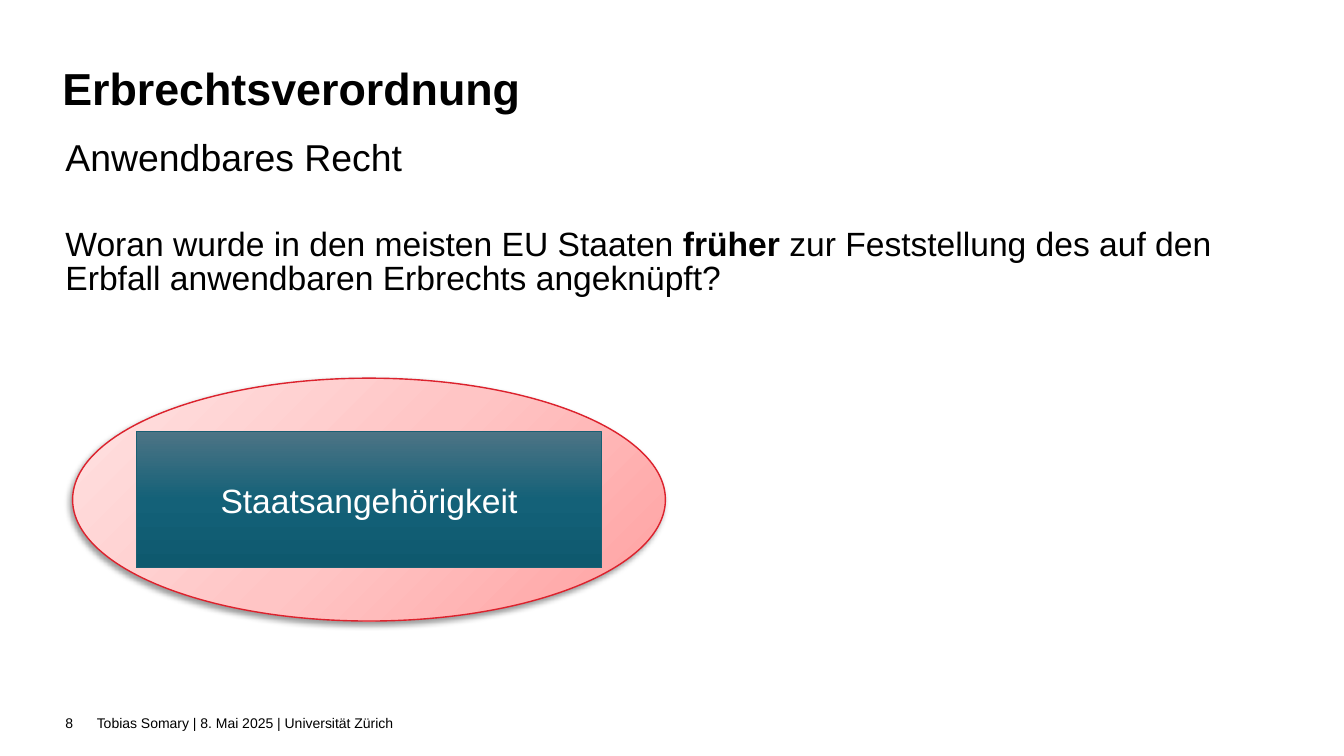
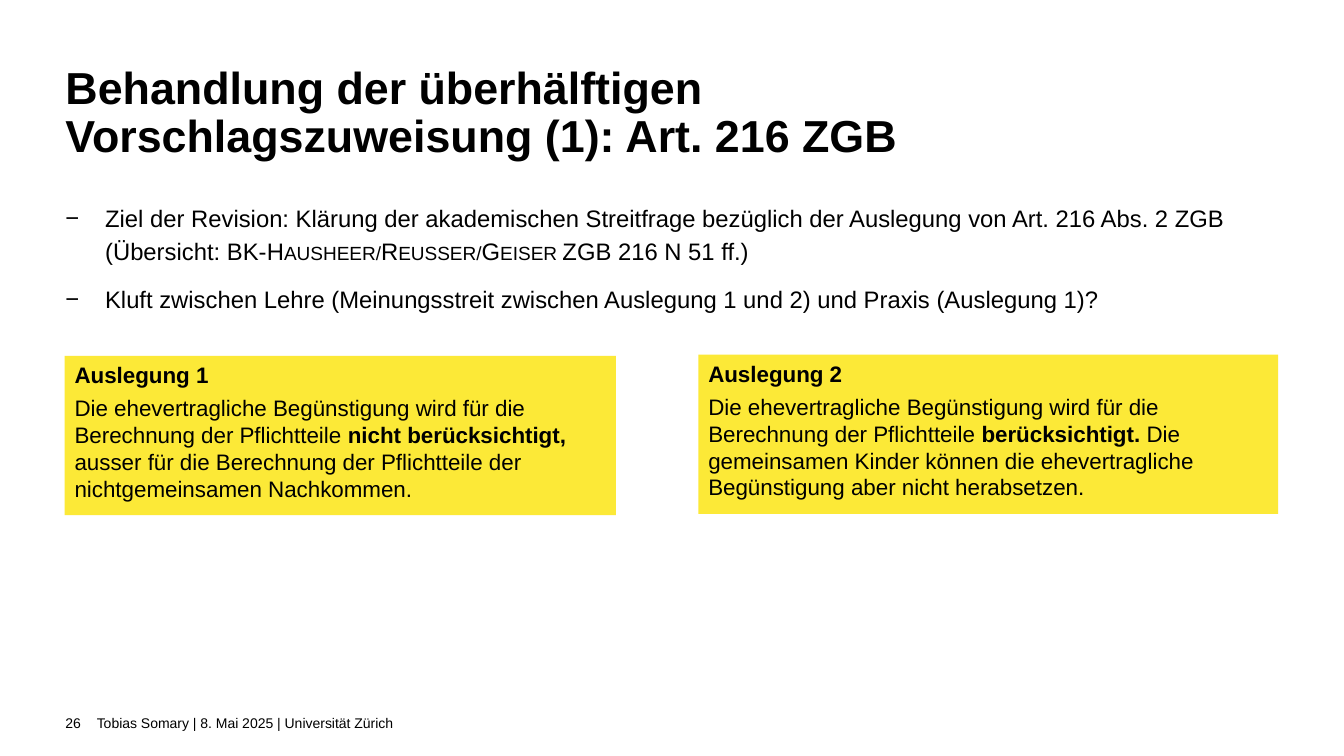
from lxml.etree import SubElement
from pptx import Presentation
from pptx.dml.color import RGBColor
from pptx.enum.shapes import MSO_SHAPE
from pptx.enum.text import MSO_ANCHOR, PP_ALIGN
from pptx.oxml.ns import qn
from pptx.util import Cm, Pt

BLACK = RGBColor(0x00, 0x00, 0x00)
WHITE = RGBColor(0xFF, 0xFF, 0xFF)
YELLOW = RGBColor(0xFC, 0xE6, 0x14)
RED_LINE = RGBColor(0xDC, 0x22, 0x2D)
TEAL_LINE = RGBColor(0x19, 0x5F, 0x73)
ROSE_GRADIENT = ("FFA0A0", "FFC5C5", "FFE3E3")
TEAL_GRADIENT = ("4D7485", "146178", "0E596E")

FONT = "Arial"
LEFT = 1.65
CONTENT_WIDTH = 30.55
FOOTER = "Tobias Somary | 8. Mai 2025 | Universität Zürich"


def fill_paragraph(paragraph, runs, size, color=BLACK, bold=None):
    """Write runs given as (text, style); a newline in a text is a line break."""
    paragraph.font.name = FONT
    paragraph.font.size = Pt(size)
    paragraph.font.color.rgb = color
    paragraph.font.bold = bold
    for text, style in runs:
        for index, line in enumerate(text.split("\n")):
            if index:
                paragraph.add_line_break()
            run = paragraph.add_run()
            run.text = line
            if style == "bold":
                run.font.bold = True
            elif style == "small caps":
                run.font._element.set("cap", "small")


def add_text_frame(slide, box, anchor=MSO_ANCHOR.TOP):
    """Add a text box without insets; box is left, top, width, height in cm."""
    frame = slide.shapes.add_textbox(*map(Cm, box)).text_frame
    frame.word_wrap = True
    frame.vertical_anchor = anchor
    frame.margin_left = frame.margin_right = frame.margin_top = frame.margin_bottom = 0
    return frame


def add_line_of_text(slide, box, text, size, anchor=MSO_ANCHOR.TOP):
    frame = add_text_frame(slide, box, anchor)
    fill_paragraph(frame.paragraphs[0], [(text, None)], size)


def add_title(slide, box, text):
    paragraph = add_text_frame(slide, box).paragraphs[0]
    paragraph.line_spacing = 0.9
    fill_paragraph(paragraph, [(text, None)], 32, bold=True)


def add_footer(slide, number):
    top, height, number_width = 17.4, 1.65, 0.79
    add_line_of_text(slide, (LEFT, top, number_width, height), str(number), 10, MSO_ANCHOR.MIDDLE)
    add_line_of_text(slide, (LEFT + number_width, top, 11.94, height), FOOTER, 10, MSO_ANCHOR.MIDDLE)


def add_body(slide, box, items, size, bullet=None):
    frame = add_text_frame(slide, box)
    for index, runs in enumerate(items):
        paragraph = frame.add_paragraph() if index else frame.paragraphs[0]
        paragraph.line_spacing = Pt(24)
        paragraph.space_before = Pt(10)
        if bullet:
            properties = paragraph._p.get_or_add_pPr()
            properties.set("marL", str(Cm(1)))
            properties.set("indent", str(-Cm(1)))
            SubElement(properties, qn("a:buFont")).set("typeface", FONT)
            SubElement(properties, qn("a:buChar")).set("char", bullet)
        fill_paragraph(paragraph, runs, size)


def add_plain_shape(slide, kind, box):
    shape = slide.shapes.add_shape(kind, *map(Cm, box))
    shape.shadow.inherit = False
    return shape


def set_gradient(shape, colors, angle):
    """Spread the colours evenly; the angle runs counter-clockwise."""
    shape.fill.gradient()
    shape.fill.gradient_angle = angle
    stops = shape.element.spPr.find(qn("a:gradFill")).find(qn("a:gsLst"))
    stops.clear()
    for index, color in enumerate(colors):
        stop = SubElement(stops, qn("a:gs"))
        stop.set("pos", str(100000 * index // (len(colors) - 1)))
        SubElement(stop, qn("a:srgbClr")).set("val", color)


def set_line(shape, color, width):
    shape.line.color.rgb = color
    shape.line.width = Pt(width)


def add_soft_shadow(shape):
    effects = shape.element.spPr.find(qn("a:effectLst"))
    shadow = SubElement(effects, qn("a:outerShdw"))
    settings = {"blurRad": Pt(4), "dist": Pt(3), "dir": 135 * 60000, "algn": "tr", "rotWithShape": 0}
    for name, value in settings.items():
        shadow.set(name, str(value))
    color = SubElement(shadow, qn("a:srgbClr"))
    color.set("val", str(BLACK))
    SubElement(color, qn("a:alpha")).set("val", "40000")


def add_answer(slide, box, text):
    """Add an ellipse filling the box, with a labelled panel at its centre."""
    left, top, width, height = box
    ellipse = add_plain_shape(slide, MSO_SHAPE.FLOWCHART_CONNECTOR, box)
    set_gradient(ellipse, ROSE_GRADIENT, 135)
    set_line(ellipse, RED_LINE, 1)
    add_soft_shadow(ellipse)

    panel_width, panel_height = 11.73, 3.43
    panel_box = (left + (width - panel_width) / 2, top + (height - panel_height) / 2,
                 panel_width, panel_height)
    panel = add_plain_shape(slide, MSO_SHAPE.RECTANGLE, panel_box)
    set_gradient(panel, TEAL_GRADIENT, 270)
    set_line(panel, TEAL_LINE, 0.5)
    panel.text_frame.vertical_anchor = MSO_ANCHOR.MIDDLE
    paragraph = panel.text_frame.paragraphs[0]
    paragraph.alignment = PP_ALIGN.CENTER
    fill_paragraph(paragraph, [(text, None)], 24, WHITE)


def add_interpretation(slide, box, heading, runs):
    card = add_plain_shape(slide, MSO_SHAPE.RECTANGLE, box)
    card.fill.solid()
    card.fill.fore_color.rgb = YELLOW
    color = card.element.spPr.find(qn("a:solidFill")).find(qn("a:srgbClr"))
    SubElement(color, qn("a:alpha")).set("val", "85000")
    card.line.fill.background()
    frame = card.text_frame
    frame.word_wrap = True
    frame.vertical_anchor = MSO_ANCHOR.TOP
    heading_paragraph, text_paragraph = frame.paragraphs[0], frame.add_paragraph()
    heading_paragraph.space_after = Pt(4.6)
    for paragraph in frame.paragraphs:
        paragraph.alignment = PP_ALIGN.LEFT
    fill_paragraph(heading_paragraph, [(heading, None)], 16, bold=True)
    fill_paragraph(text_paragraph, runs, 16)


def build_applicable_law(slide):
    add_title(slide, (1.57, 1.68, CONTENT_WIDTH, 1.3), "Erbrechtsverordnung")
    add_line_of_text(slide, (LEFT, 3.38, 19.8, 1.5), "Anwendbares Recht", 26.7)
    question = [
        ("Woran wurde in den meisten EU Staaten ", None),
        ("früher", "bold"),
        (" zur Feststellung des auf den Erbfall anwendbaren Erbrechts angeknüpft?", None),
    ]
    add_body(slide, (LEFT, 5.79, 30.35, 3), [question], 24)
    add_answer(slide, (1.83, 9.53, 14.94, 6.12), "Staatsangehörigkeit")
    add_footer(slide, 8)


def build_interpretations(slide):
    add_title(slide, (LEFT, 1.65, CONTENT_WIDTH, 2.5),
              "Behandlung der überhälftigen\nVorschlagszuweisung (1): Art. 216 ZGB")
    aim = [
        ("Ziel der Revision: Klärung der akademischen Streitfrage bezüglich der Auslegung "
         "von Art. 216 Abs. 2 ZGB\n(Übersicht: BK-", None),
        ("Hausheer/Reusser/Geiser ", "small caps"),
        ("ZGB 216 N 51 ff.)", None),
    ]
    gap = [("Kluft zwischen Lehre (Meinungsstreit zwischen Auslegung 1 und 2) "
            "und Praxis (Auslegung 1)?", None)]
    add_body(slide, (LEFT, 5, CONTENT_WIDTH, 3.5), [aim, gap], 17, bullet="−")

    opening = ("Die ehevertragliche Begünstigung wird für die Berechnung der Pflichtteile ", None)
    add_interpretation(slide, (1.63, 8.97, 13.89, 4.01), "Auslegung 1", [
        opening,
        ("nicht berücksichtigt,", "bold"),
        (" ausser für die Berechnung der Pflichtteile der nichtgemeinsamen Nachkommen.", None),
    ])
    add_interpretation(slide, (17.6, 8.94, 14.61, 4.01), "Auslegung 2", [
        opening,
        ("berücksichtigt.", "bold"),
        (" Die gemeinsamen Kinder können die ehevertragliche Begünstigung "
         "aber nicht herabsetzen.", None),
    ])
    add_footer(slide, 26)


def main():
    presentation = Presentation()
    presentation.slide_width = Cm(33.87)
    presentation.slide_height = Cm(19.05)
    blank_layout = presentation.slide_layouts[6]
    for build in (build_applicable_law, build_interpretations):
        build(presentation.slides.add_slide(blank_layout))
    presentation.save("out.pptx")


if __name__ == "__main__":
    main()
